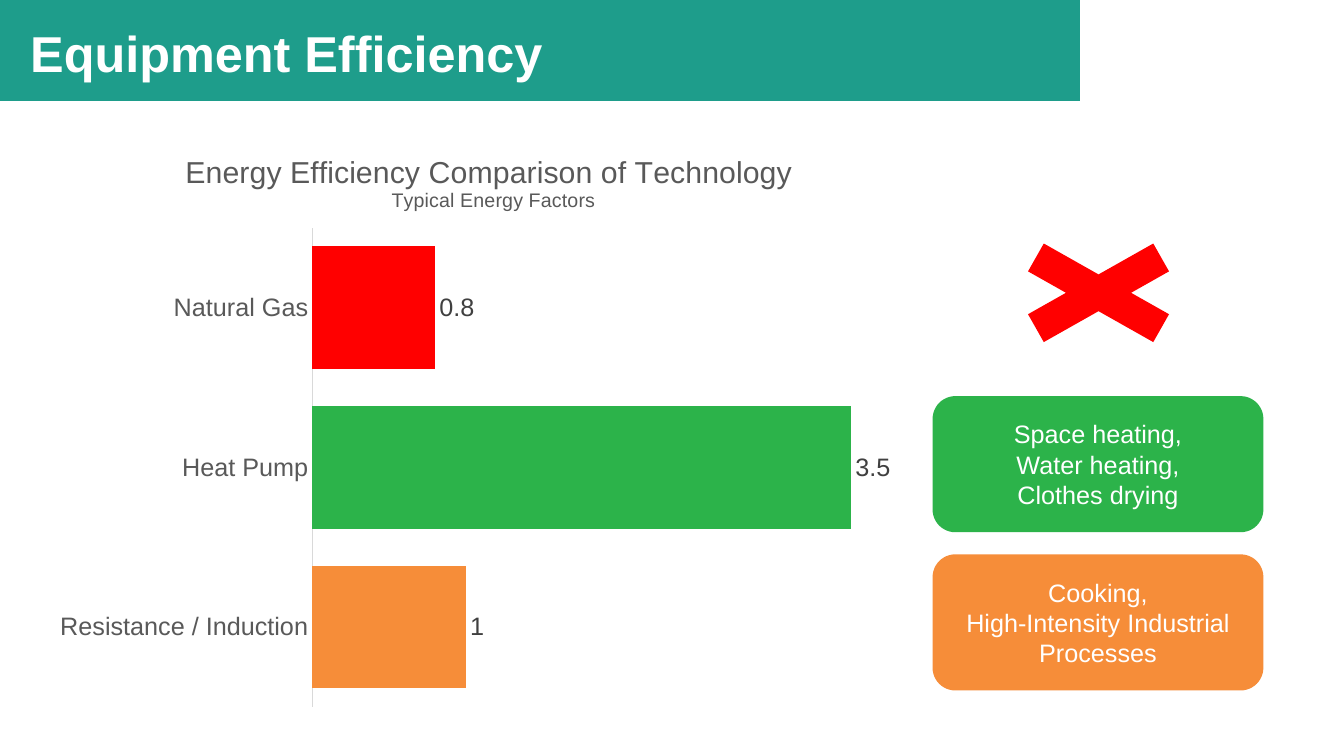
import dataclasses

import pptx
import pptx.chart.data
import pptx.dml.color
import pptx.enum.chart
import pptx.enum.shapes
import pptx.enum.text
import pptx.oxml
import pptx.oxml.ns
import pptx.util

WIDTH = pptx.util.Inches(13.33)
HEIGHT = pptx.util.Inches(7.5)


@dataclasses.dataclass(frozen=True)
class Theme:
    font: str = "Arial"
    band: str = "1E9D8B"
    white: str = "FFFFFF"
    gas: str = "FF0000"
    pump: str = "2CB34A"
    resistance: str = "F68D39"
    text: str = "595959"
    value: str = "404040"
    axis: str = "D9D9D9"
    title_size: float = 36
    chart_title_size: float = 21.6
    body_size: float = 18
    subtitle_size: float = 14


THEME = Theme()
SHAPES = pptx.enum.shapes.MSO_SHAPE


def area(left, top, width, height):
    """Turn percentages of the slide's width and height into lengths."""
    return (int(WIDTH * left / 100), int(HEIGHT * top / 100),
            int(WIDTH * width / 100), int(HEIGHT * height / 100))


def color(value):
    return pptx.dml.color.RGBColor.from_string(value)


def style(font, size, tint, bold=False):
    font.name = THEME.font
    font.size = pptx.util.Pt(size)
    font.bold = bold
    font.color.rgb = color(tint)


def paint(target, tint):
    target.fill.solid()
    target.fill.fore_color.rgb = color(tint)


def add_block(page, kind, place, tint, lines=()):
    """Add a plain filled shape, with centred lines of text if given."""
    block = page.shapes.add_shape(kind, *area(*place))
    block.shadow.inherit = False
    paint(block, tint)
    block.line.fill.background()
    frame = block.text_frame
    frame.vertical_anchor = pptx.enum.text.MSO_ANCHOR.MIDDLE
    for number, line in enumerate(lines):
        para = frame.add_paragraph() if number else frame.paragraphs[0]
        para.text = line
        para.alignment = pptx.enum.text.PP_ALIGN.CENTER
        style(para.font, THEME.body_size, THEME.white)
    return block


def set_title(page, text):
    band = add_block(page, SHAPES.RECTANGLE, (0, -0.13, 80.35, 13.47), THEME.band)
    title = page.shapes.title
    title.left, title.top, title.width, title.height = area(1.5, 2.8, 48.24, 9.33)
    title.text_frame.text = text
    title.text_frame.vertical_anchor = pptx.enum.text.MSO_ANCHOR.MIDDLE
    para = title.text_frame.paragraphs[0]
    para.alignment = pptx.enum.text.PP_ALIGN.LEFT
    para.line_spacing = 0.9
    style(para.font, THEME.title_size, THEME.white, bold=True)
    # The band lies behind the title
    title._element.addprevious(band._element)


def set_chart_title(chart, lines):
    frame = chart.chart_title.text_frame
    for number, (text, size) in enumerate(lines):
        para = frame.add_paragraph() if number else frame.paragraphs[0]
        para.text = text
        style(para.font, size, THEME.text)
    chart.chart_title.include_in_layout = False


def place_plot(chart, **shares):
    """Fix the inner plot area as shares of the chart's size."""
    plot_area = chart._chartSpace.chart.plotArea
    for old in plot_area.findall(pptx.oxml.ns.qn("c:layout")):
        plot_area.remove(old)
    sizes = "".join(f'<c:{key} val="{share}"/>' for key, share in shares.items())
    plot_area.insert(0, pptx.oxml.parse_xml(
        f'<c:layout {pptx.oxml.ns.nsdecls("c")}><c:manualLayout>'
        '<c:layoutTarget val="inner"/><c:xMode val="edge"/><c:yMode val="edge"/>'
        f'{sizes}</c:manualLayout></c:layout>'))


def add_efficiency_chart(page, place, bars):
    data = pptx.chart.data.CategoryChartData()
    data.categories = [name for name, _, _ in bars]
    data.add_series("Series 1", [factor for _, factor, _ in bars])
    chart = page.shapes.add_chart(
        pptx.enum.chart.XL_CHART_TYPE.BAR_CLUSTERED, *area(*place), data).chart
    style(chart.font, THEME.body_size, THEME.text)
    chart.has_legend = False
    set_chart_title(chart, [
        ("Energy Efficiency Comparison of Technology ", THEME.chart_title_size),
        ("Typical Energy Factors", THEME.subtitle_size)])
    place_plot(chart, x=0.3, y=0.16, w=0.68, h=0.82)

    # Axes
    names = chart.category_axis
    names.reverse_order = True
    names.major_tick_mark = pptx.enum.chart.XL_TICK_MARK.NONE
    names.format.line.color.rgb = color(THEME.axis)
    names.format.line.width = pptx.util.Pt(0.75)
    style(names.tick_labels.font, THEME.body_size, THEME.text)
    factors = chart.value_axis
    factors.minimum_scale, factors.maximum_scale = 0, 4
    factors.has_major_gridlines = False
    factors.visible = False

    # Bars and their values
    plot = chart.plots[0]
    plot.gap_width = 30
    plot.vary_by_categories = False
    series = plot.series[0]
    paint(series.format, THEME.pump)
    for number, (_, _, tint) in enumerate(bars):
        paint(series.points[number].format, tint)
    labels = series.data_labels
    labels.show_value = True
    labels.position = pptx.enum.chart.XL_LABEL_POSITION.OUTSIDE_END
    style(labels.font, THEME.body_size, THEME.value)


def main():
    deck = pptx.Presentation()
    deck.slide_width, deck.slide_height = WIDTH, HEIGHT
    page = deck.slides.add_slide(deck.slide_layouts.get_by_name("Title Only"))
    set_title(page, "Equipment Efficiency")

    add_efficiency_chart(page, (3, 17.73, 67.44, 77.33), [
        ("Natural Gas", 0.8, THEME.gas),
        ("Heat Pump", 3.5, THEME.pump),
        ("Resistance / Induction", 1, THEME.resistance)])

    # Uses beside the bars
    uses = [
        (THEME.pump, ["Space heating,", "Water heating,", "Clothes drying"]),
        (THEME.resistance, ["Cooking,", "High-Intensity Industrial Processes"])]
    for row, (tint, lines) in enumerate(uses):
        add_block(page, SHAPES.ROUNDED_RECTANGLE,
                  (69.39, 52.4 + 20.93 * row, 24.61, 18), tint, lines)
    add_block(page, SHAPES.MATH_MULTIPLY, (72.77, 29.73, 17.93, 18), THEME.gas)

    deck.save("out.pptx")


if __name__ == "__main__":
    main()
